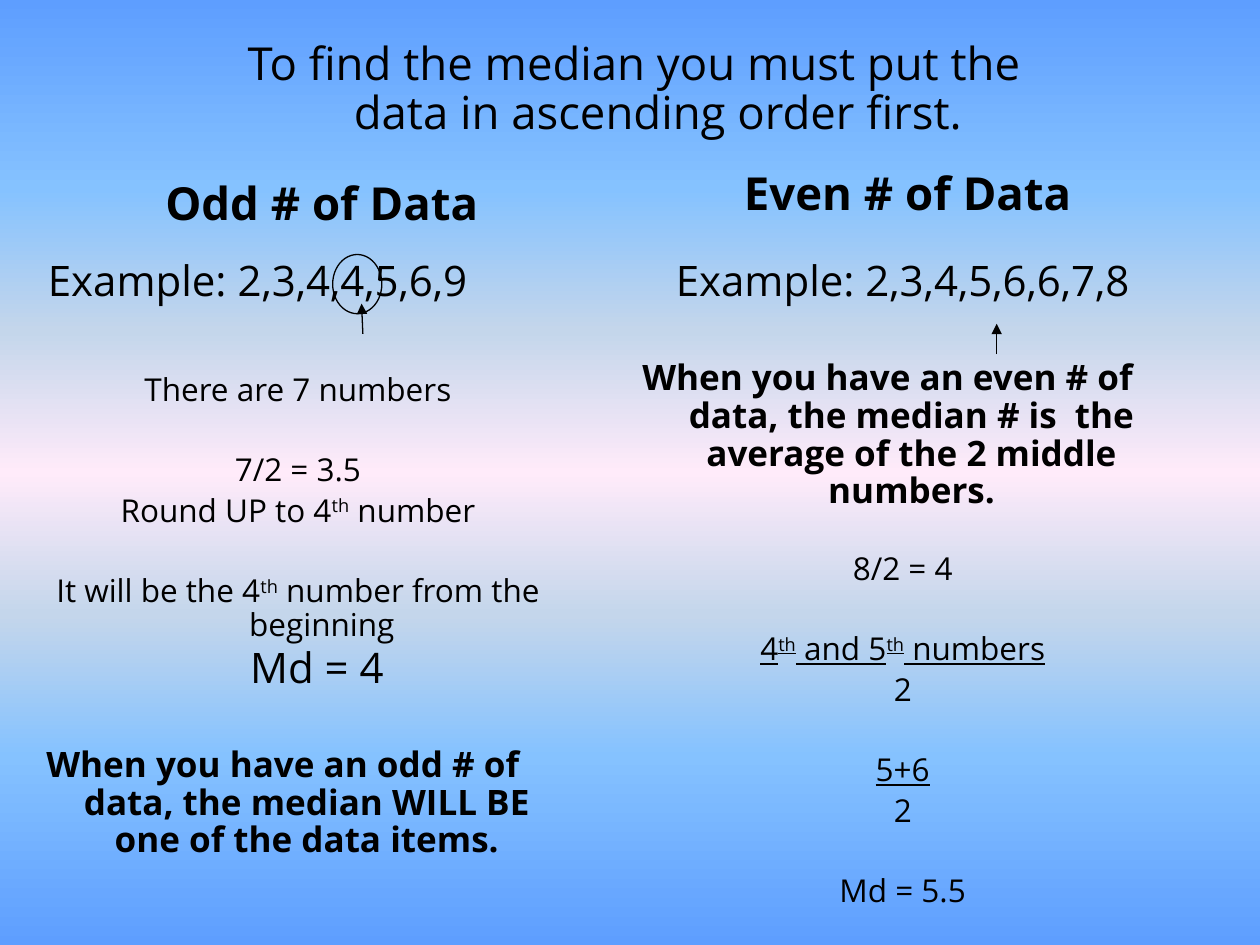
from dataclasses import dataclass

from lxml.etree import SubElement
from pptx import Presentation
from pptx.dml.color import RGBColor
from pptx.enum.shapes import MSO_CONNECTOR, MSO_SHAPE
from pptx.enum.text import PP_ALIGN
from pptx.oxml.ns import qn
from pptx.util import Inches, Length, Pt


@dataclass(frozen=True)
class Theme:
    font: str = "Open Sans"
    ink: RGBColor = RGBColor(0, 0, 0)
    heading: int = 26
    example: int = 24
    rule: int = 20
    step: int = 18
    line_spacing: float = 0.9
    paragraph_gap: float = 0.2  # share of the type size
    step_gap: float = 26.6  # points, separates groups of steps
    outline: float = 0.75
    # Colour stops from top to bottom: percent and colour
    sky: tuple = (
        (0, "5E9EFF"), (20, "85C2FF"), (35, "C4D6EB"), (50, "FFEBFA"),
        (65, "C4D6EB"), (80, "85C2FF"), (100, "5E9EFF"),
    )


@dataclass(frozen=True)
class Line:
    text: str  # parts between ^ marks are superscript
    underline: bool = False
    starts_group: bool = False


@dataclass(frozen=True)
class TextBlock:
    column: float
    row: float
    columns: float
    rows: float
    size: int
    lines: tuple[Line, ...]
    bold: bool = False


THEME = Theme()
COLUMNS, ROWS = 100, 75
SLIDE_WIDTH, SLIDE_HEIGHT = Inches(10), Inches(7.5)
HANGING_INDENT = Inches(0.38)

# Block sizes shared by both halves
HEADING_BOX = (42.5, 14.2)
WIDE_BOX = (66.9, 6.3)
STEPS_BOX = (48.1, 24.9)
RULE_BOX = (44.1, 11.8)

TEXT_BLOCKS = (
    TextBlock(16.9, 2.8, *WIDE_BOX, THEME.heading, (
        Line("To find the median you must put the data in ascending order first."),
    )),
    # Odd half
    TextBlock(4.3, 13.9, *HEADING_BOX, THEME.heading, (Line("Odd # of Data"),), True),
    TextBlock(-13, 20.2, *WIDE_BOX, THEME.example, (Line("Example: 2,3,4,4,5,6,9"),)),
    TextBlock(-0.4, 29.2, *STEPS_BOX, THEME.step, (
        Line("There are 7 numbers"),
        Line("7/2 = 3.5", starts_group=True),
        Line("Round UP to 4^th^ number"),
        Line("It will be the 4^th^ number from the beginning", starts_group=True),
    )),
    TextBlock(-8.3, 50.9, *WIDE_BOX, THEME.example, (Line("Md = 4"),)),
    TextBlock(0.4, 58.8, *RULE_BOX, THEME.rule, (
        Line("When you have an odd # of data, the median WILL BE one of the data items."),
    ), True),
    # Even half
    TextBlock(50.8, 13.1, *HEADING_BOX, THEME.heading, (Line("Even # of Data"),), True),
    TextBlock(38.2, 20.2, *WIDE_BOX, THEME.example, (Line("Example: 2,3,4,5,6,6,7,8"),)),
    TextBlock(48.4, 28.1, *RULE_BOX, THEME.rule, (
        Line("When you have an even # of data, the median # is  the average "
             "of the 2 middle numbers."),
    ), True),
    TextBlock(47.6, 43.4, *STEPS_BOX, THEME.step, (
        Line("8/2 = 4"),
        Line("4^th^ and 5^th^ numbers", underline=True, starts_group=True),
        Line("2"),
        Line("5+6", underline=True, starts_group=True),
        Line("2"),
        Line("Md = 5.5", starts_group=True),
    )),
)


def across(columns: float) -> Length:
    return Length(round(SLIDE_WIDTH * columns / COLUMNS))


def down(rows: float) -> Length:
    return Length(round(SLIDE_HEIGHT * rows / ROWS))


def paint_background(slide) -> None:
    fill = slide.background.fill
    fill.gradient()
    fill.gradient_angle = 270
    stops = slide._element.find(".//" + qn("a:gsLst"))
    for stop in list(stops):
        stops.remove(stop)
    for percent, colour in THEME.sky:
        stop = SubElement(stops, qn("a:gs"), pos=str(percent * 1000))
        SubElement(stop, qn("a:srgbClr"), val=colour)


def write_line(paragraph, line: Line, block: TextBlock) -> None:
    paragraph.alignment = PP_ALIGN.CENTER
    paragraph.line_spacing = THEME.line_spacing
    gap = THEME.step_gap if line.starts_group else block.size * THEME.paragraph_gap
    paragraph.space_before = Pt(gap)
    properties = paragraph._p.get_or_add_pPr()
    properties.set("marL", str(HANGING_INDENT))
    properties.set("indent", str(-HANGING_INDENT))
    font = paragraph.font
    font.name, font.size, font.bold = THEME.font, Pt(block.size), block.bold
    font.underline = line.underline
    font.color.rgb = THEME.ink
    for index, part in enumerate(line.text.split("^")):
        run = paragraph.add_run()
        run.text = part
        if index % 2:
            run._r.get_or_add_rPr().set("baseline", "30000")


def draw_text(slide, block: TextBlock) -> None:
    box = slide.shapes.add_textbox(
        across(block.column), down(block.row), across(block.columns), down(block.rows))
    frame = box.text_frame
    frame.word_wrap = True
    for index, line in enumerate(block.lines):
        paragraph = frame.add_paragraph() if index else frame.paragraphs[0]
        write_line(paragraph, line, block)


def draw_arrow(shapes, start: tuple[float, float], end: tuple[float, float]) -> None:
    arrow = shapes.add_connector(
        MSO_CONNECTOR.STRAIGHT,
        across(start[0]), down(start[1]), across(end[0]), down(end[1]))
    arrow.line.color.rgb = THEME.ink
    arrow.line.width = Pt(THEME.outline)
    SubElement(arrow.line._get_or_add_ln(), qn("a:tailEnd"), type="triangle")
    SubElement(arrow._element.spPr, qn("a:effectLst"))


def draw_ring(shapes, column: float, row: float, columns: float, rows: float) -> None:
    ring = shapes.add_shape(
        MSO_SHAPE.OVAL, across(column), down(row), across(columns), down(rows))
    ring.shadow.inherit = False
    ring.fill.background()
    ring.line.color.rgb = THEME.ink
    ring.line.width = Pt(THEME.outline)


def main() -> None:
    presentation = Presentation()
    presentation.slide_width, presentation.slide_height = SLIDE_WIDTH, SLIDE_HEIGHT
    slide = presentation.slides.add_slide(presentation.slide_layouts[6])
    paint_background(slide)
    for block in TEXT_BLOCKS:
        draw_text(slide, block)

    # Pointer between the two middle numbers
    draw_arrow(slide.shapes, (79.1, 28.1), (79.1, 25.7))

    # Ring and pointer on the single middle number
    middle_mark = slide.shapes.add_group_shape()
    draw_arrow(middle_mark.shapes, (28.8, 26.5), (28.7, 24.1))
    draw_ring(middle_mark.shapes, 26.4, 20.2, 3.9, 4.7)

    presentation.save("out.pptx")


if __name__ == "__main__":
    main()
